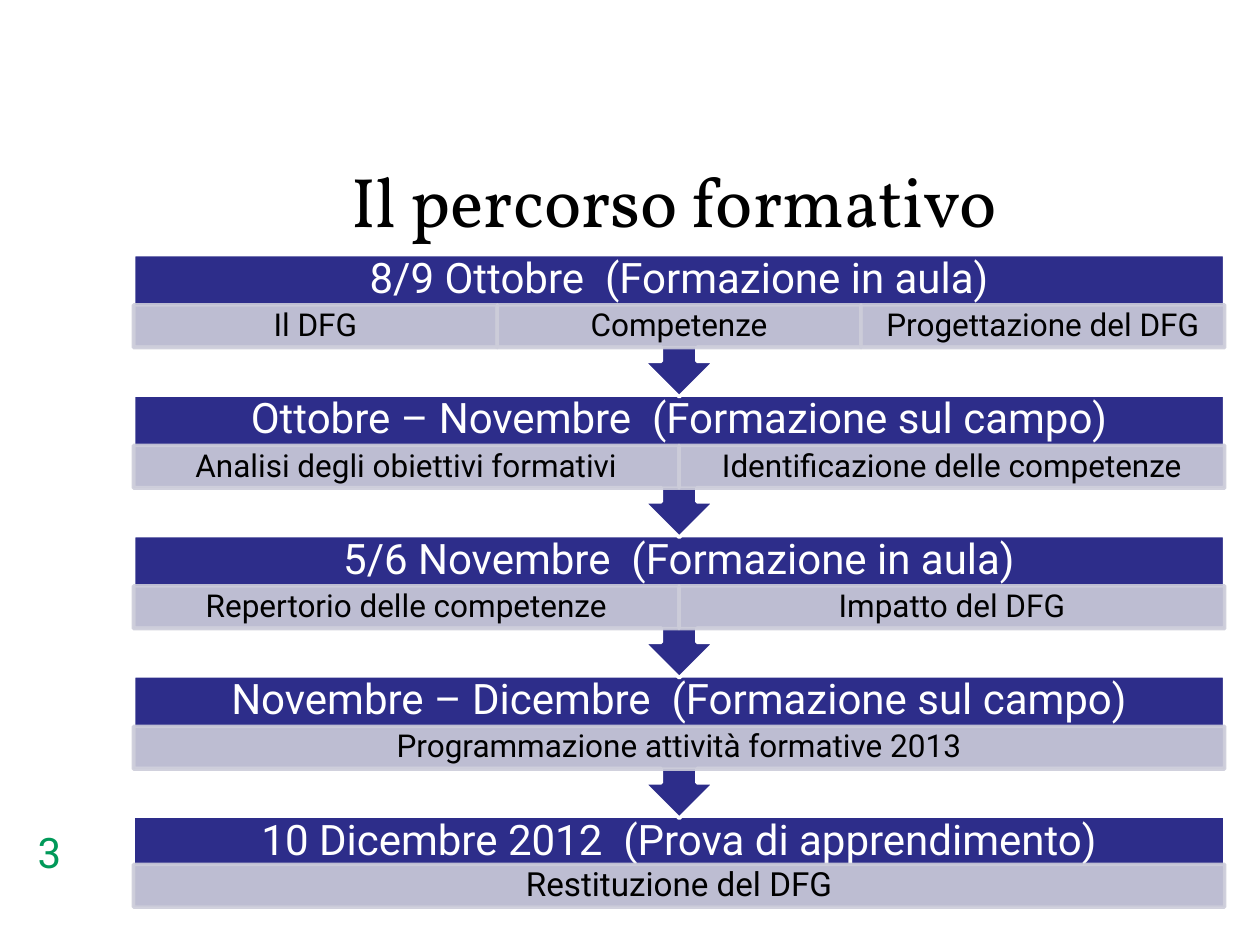
from lxml import etree
from pptx import Presentation
from pptx import util as u
from pptx.dml.color import RGBColor
from pptx.enum import shapes, text
from pptx.oxml.ns import qn

COLORS = {"stage": "2D2D8A", "cell": "CDCDDA", "white": "FFFFFF",
          "black": "000000", "number": "009959"}
LEFT, WIDTH = 1.06, 8.66
FIRST_TOP, PITCH = 2.02, 1.115
CALLOUT_HEIGHT, LAST_HEIGHT = 1.13, 0.73
HEADER_HEIGHT, CELL_HEIGHT = 0.4, 0.34

STAGES = [
    ("8/9 Ottobre  (Formazione in aula)",
     ["Il DFG", "Competenze", "Progettazione del DFG"]),
    ("Ottobre – Novembre  (Formazione sul campo)",
     ["Analisi degli obiettivi formativi", "Identificazione delle competenze"]),
    ("5/6 Novembre  (Formazione in aula)",
     ["Repertorio delle competenze", "Impatto del DFG"]),
    ("Novembre – Dicembre  (Formazione sul campo)",
     ["Programmazione attività formative 2013"]),
    ("10 Dicembre 2012  (Prova di apprendimento)",
     ["Restituzione del DFG"]),
]


def color(name):
    return RGBColor.from_string(COLORS[name])


class SlideBuilder:
    """Holds the style and the current slide."""

    body_font = "Roboto"
    title_font = "Vollkorn"

    def __init__(self, presentation):
        self.slide = presentation.slides.add_slide(presentation.slide_layouts[5])

    def set_text(self, shape, words, size, ink, font=None, align=text.PP_ALIGN.CENTER,
                 anchor=text.MSO_ANCHOR.MIDDLE, spacing=0.9, margins=(0.14, 0)):
        frame = shape.text_frame
        side, edge = (u.Inches(margin) for margin in margins)
        frame_format = {"word_wrap": True, "vertical_anchor": anchor,
                        "margin_left": side, "margin_right": side,
                        "margin_top": edge, "margin_bottom": edge}
        for name, value in frame_format.items():
            setattr(frame, name, value)
        paragraph = frame.paragraphs[0]
        paragraph.alignment = align
        paragraph.line_spacing = spacing
        run = paragraph.add_run()
        run.text = words
        for name, value in {"size": u.Pt(size), "name": font or self.body_font}.items():
            setattr(run.font, name, value)
        run.font.color.rgb = color(ink)

    def title(self, words, *box):
        shape = self.slide.shapes.title
        for name, value in zip(("left", "top", "width", "height"), box):
            setattr(shape, name, u.Inches(value))
        self.set_text(shape, words, 40, "black", self.title_font, spacing=1)

    def label(self, words, box, size, ink, **style):
        shape = self.slide.shapes.add_textbox(*map(u.Inches, box))
        self.set_text(shape, words, size, ink, **style)

    def block(self, kind, box, fill, line, opacity=None):
        shape = self.slide.shapes.add_shape(kind, *map(u.Inches, box))
        shape.shadow.inherit = False
        shape.fill.solid()
        shape.fill.fore_color.rgb = color(fill)
        shape.line.color.rgb = color(line)
        shape.line.width = u.Pt(2)
        if opacity is not None:
            for element in shape._element.spPr.iter(qn("a:srgbClr")):
                etree.SubElement(element, qn("a:alpha"), val=str(opacity * 1000))
        return shape

    def stage(self, heading, cells, top, is_last):
        """Draw a heading band with its row of cells; all but the last point down."""
        if is_last:
            kind, height, cell_offset, cell_size = (
                shapes.MSO_SHAPE.RECTANGLE, LAST_HEIGHT, 0.38, 19)
        else:
            kind, height, cell_offset, cell_size = (
                shapes.MSO_SHAPE.UP_ARROW_CALLOUT, CALLOUT_HEIGHT, 0.4, 18)
        band = self.block(kind, (LEFT, top, WIDTH, height), "stage", "white")
        band.rotation = 0 if is_last else 180
        self.label(heading, (LEFT, top, WIDTH, HEADER_HEIGHT), 24, "white")
        cell_width = WIDTH / len(cells)
        for column, words in enumerate(cells):
            box = (LEFT + column * cell_width, top + cell_offset, cell_width, CELL_HEIGHT)
            cell = self.block(shapes.MSO_SHAPE.RECTANGLE, box, "cell", "cell", 90)
            self.set_text(cell, words, cell_size, "black", margins=(0.14, 0.03))


def main():
    presentation = Presentation()
    presentation.slide_width, presentation.slide_height = u.Inches(10), u.Inches(7.5)
    builder = SlideBuilder(presentation)
    builder.label("3", (0.2, 6.51, 0.63, 0.39), 24, "number", spacing=1,
                  align=text.PP_ALIGN.LEFT, anchor=text.MSO_ANCHOR.TOP,
                  margins=(0.1, 0.05))
    builder.title("Il percorso formativo", 0.98, 1.31, 8.74, 0.55)
    last = len(STAGES) - 1
    # Bottom stage first, so that each arrow lies over the band below it
    for row in range(last, -1, -1):
        builder.stage(*STAGES[row], FIRST_TOP + row * PITCH, row == last)
    presentation.save("out.pptx")


if __name__ == "__main__":
    main()
